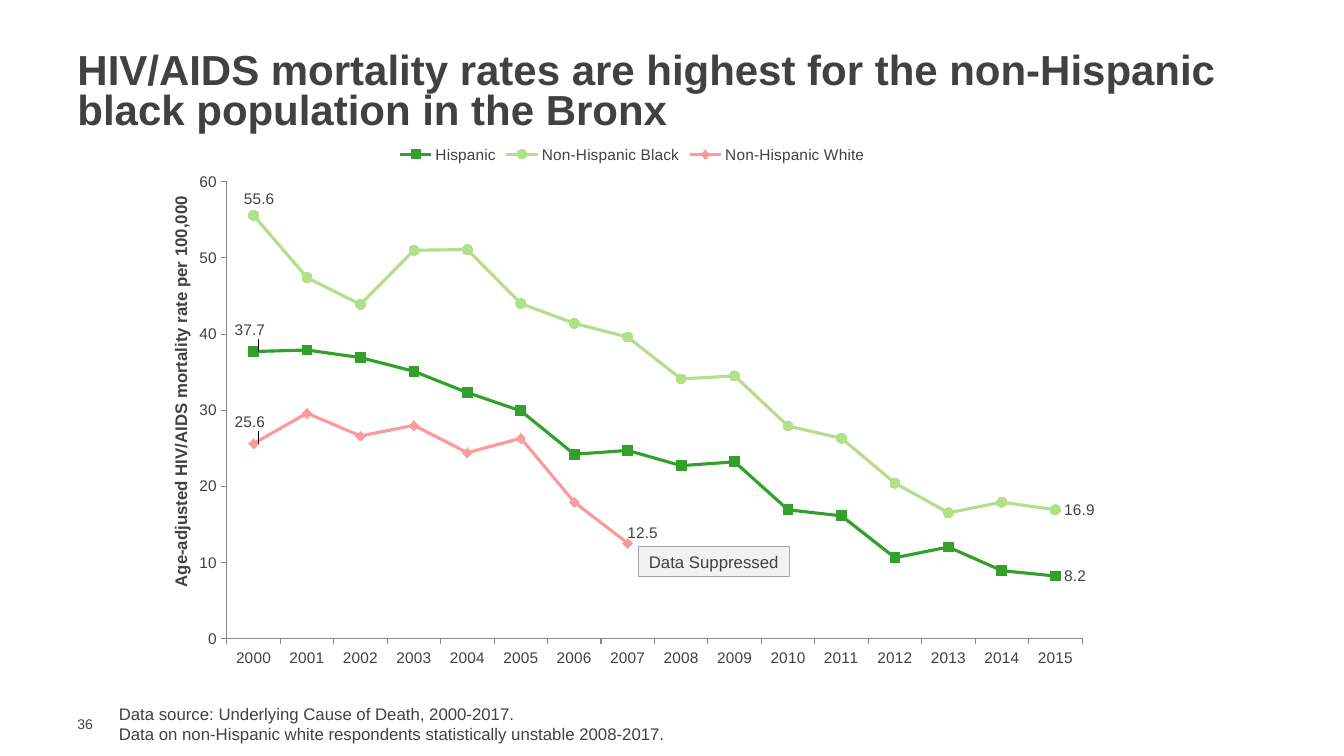
"""Build the slide on HIV/AIDS mortality rates in the Bronx."""
import pptx
import pptx.chart.data
import pptx.dml.color
import pptx.enum.chart
import pptx.enum.shapes
import pptx.enum.text
import pptx.oxml
import pptx.oxml.ns
import pptx.util

Inches, Pt = pptx.util.Inches, pptx.util.Pt
XL = pptx.enum.chart
ANCHOR = pptx.enum.text.MSO_ANCHOR
INK = "414042"

TITLE = ["HIV/AIDS mortality rates are highest for the non-Hispanic black population in the Bronx"]
SOURCES = ["Data source: Underlying Cause of Death, 2000-2017.",
           "Data on non-Hispanic white respondents statistically unstable 2008-2017."]
AXIS_TITLE = "Age-adjusted HIV/AIDS mortality rate per 100,000"
YEARS = [str(year) for year in range(2000, 2016)]
MARKER = XL.XL_MARKER_STYLE
SERIES = [
    ("Hispanic", "33A02C", MARKER.SQUARE,
     [37.7, 37.9, 36.9, 35.1, 32.3, 29.9, 24.2, 24.7, 22.7, 23.2, 16.9, 16.1, 10.6, 12, 8.9, 8.2],
     {0: (-0.03, -0.04), 15: None}),
    ("Non-Hispanic Black", "B2DF8A", MARKER.CIRCLE,
     [55.6, 47.4, 43.9, 51, 51.1, 44, 41.4, 39.6, 34.1, 34.5, 27.9, 26.3, 20.4, 16.5, 17.9, 16.9],
     {0: (-0.02, -0.03), 15: None}),
    ("Non-Hispanic White", "FB9A99", MARKER.DIAMOND,
     [25.6, 29.6, 26.6, 28, 24.4, 26.3, 17.9, 12.5] + [None] * 8,
     {0: (-0.03, -0.04), 7: (-0.01, -0.02)}),
]


def rgb(value):
    return pptx.dml.color.RGBColor.from_string(value)


def apply(target, values):
    for name, value in values.items():
        setattr(target, name, value)


def style(font, size, bold=False):
    apply(font, {"name": "Arial", "size": Pt(size), "bold": bold})
    font.color.rgb = rgb(INK)


def write(sp, lines, size, bold=False, para=None, **frame):
    tf = sp.text_frame
    apply(tf, {"word_wrap": True, **frame})
    for i, line in enumerate(lines):
        p = tf.add_paragraph() if i else tf.paragraphs[0]
        apply(p, para or {})
        r = p.add_run()
        r.text = line
        style(r.font, size, bold)


def add_text(s, box, *args, **kwargs):
    write(s.shapes.add_textbox(*map(Inches, box)), *args, **kwargs)


def set_layout(parent, index, mode, **values):
    for old in parent.findall(pptx.oxml.ns.qn("c:layout")):
        parent.remove(old)
    parts = '<c:layoutTarget val="inner"/>' if "w" in values else ""
    if mode == "edge":
        parts += '<c:xMode val="edge"/><c:yMode val="edge"/>'
    parts += "".join(f'<c:{key} val="{value}"/>' for key, value in values.items())
    ns = pptx.oxml.ns.nsdecls("c")
    parent.insert(index, pptx.oxml.parse_xml(
        f"<c:layout {ns}><c:manualLayout>{parts}</c:manualLayout></c:layout>"))


def add_rates_chart(s):
    data = pptx.chart.data.CategoryChartData()
    data.categories = YEARS
    for name, color, marker, values, labels in SERIES:
        data.add_series(name, values)
    chart = s.shapes.add_chart(XL.XL_CHART_TYPE.LINE_MARKERS,
                               *map(Inches, (1.66, 1.33, 9.22, 5.33)), data).chart
    apply(chart, {"has_title": False, "has_legend": True})
    style(chart.font, 10)
    apply(chart.legend, {"position": XL.XL_LEGEND_POSITION.TOP, "include_in_layout": False})
    style(chart.legend.font, 11)
    chart.plots[0].vary_by_categories = False

    for axis in (chart.category_axis, chart.value_axis):
        apply(axis, {"has_major_gridlines": False,
                     "major_tick_mark": XL.XL_TICK_MARK.OUTSIDE,
                     "minor_tick_mark": XL.XL_TICK_MARK.NONE})
        style(axis.tick_labels.font, 11)
        axis.format.line.color.rgb = rgb("898989")
        axis.format.line.width = Pt(0.75)
    value_axis = chart.value_axis
    apply(value_axis, {"minimum_scale": 0, "maximum_scale": 60, "major_unit": 10})
    write(value_axis.axis_title, [AXIS_TITLE], 12, bold=True)
    set_layout(value_axis.axis_title.element, 1, "edge", x=0, y=0.11)

    for ser, (name, color, marker, values, labels) in zip(chart.plots[0].series, SERIES):
        ser.smooth = False
        ser.format.line.color.rgb = rgb(color)
        ser.format.line.width = Pt(2.25)
        apply(ser.marker, {"style": marker, "size": 7})
        ser.marker.format.fill.solid()
        ser.marker.format.fill.fore_color.rgb = rgb(color)
        ser.marker.format.line.color.rgb = rgb(color)
        ser.data_labels.show_value = False
        for index in labels:
            label = ser.points[index].data_label
            style(label.font, 11)
            label.position = XL.XL_LABEL_POSITION.RIGHT

    offsets = [offset for row in SERIES for offset in row[-1].values()]
    for label, offset in zip(chart.element.xpath(".//c:dLbl"), offsets):
        if offset:
            set_layout(label, 1, "factor", x=offset[0], y=offset[1])
    set_layout(chart.element.xpath(".//c:plotArea")[0], 0, "edge",
               x=0.064, y=0.089, w=0.92, h=0.85)


def add_suppressed_note(s):
    sp = s.shapes.add_shape(pptx.enum.shapes.MSO_SHAPE.RECTANGLE,
                            *map(Inches, (6.33, 5.42, 1.5, 0.3)))
    sp.shadow.inherit = False
    sp.fill.solid()
    sp.fill.fore_color.rgb = rgb("F2F2F2")
    sp.line.color.rgb = rgb("A6A6A6")
    sp.line.width = Pt(0.75)
    write(sp, ["Data Suppressed"], 12, para={"alignment": pptx.enum.text.PP_ALIGN.CENTER},
          vertical_anchor=ANCHOR.MIDDLE)


def main():
    prs = pptx.Presentation()
    apply(prs, {"slide_width": Inches(13.33), "slide_height": Inches(7.5)})
    s = prs.slides.add_slide(prs.slide_layouts[6])
    add_text(s, (0.67, 7.1, 0.43, 0.17), ["36"], 10, vertical_anchor=ANCHOR.MIDDLE,
             margin_top=0, margin_right=0, margin_bottom=0)
    add_text(s, (0.67, 0.47, 12, 0.91), TITLE, 30, bold=True,
             para={"line_spacing": 0.8}, vertical_anchor=ANCHOR.MIDDLE)
    add_rates_chart(s)
    add_text(s, (1.08, 6.93, 9.71, 0.5), SOURCES, 12)
    add_suppressed_note(s)
    prs.save("out.pptx")


if __name__ == "__main__":
    main()
